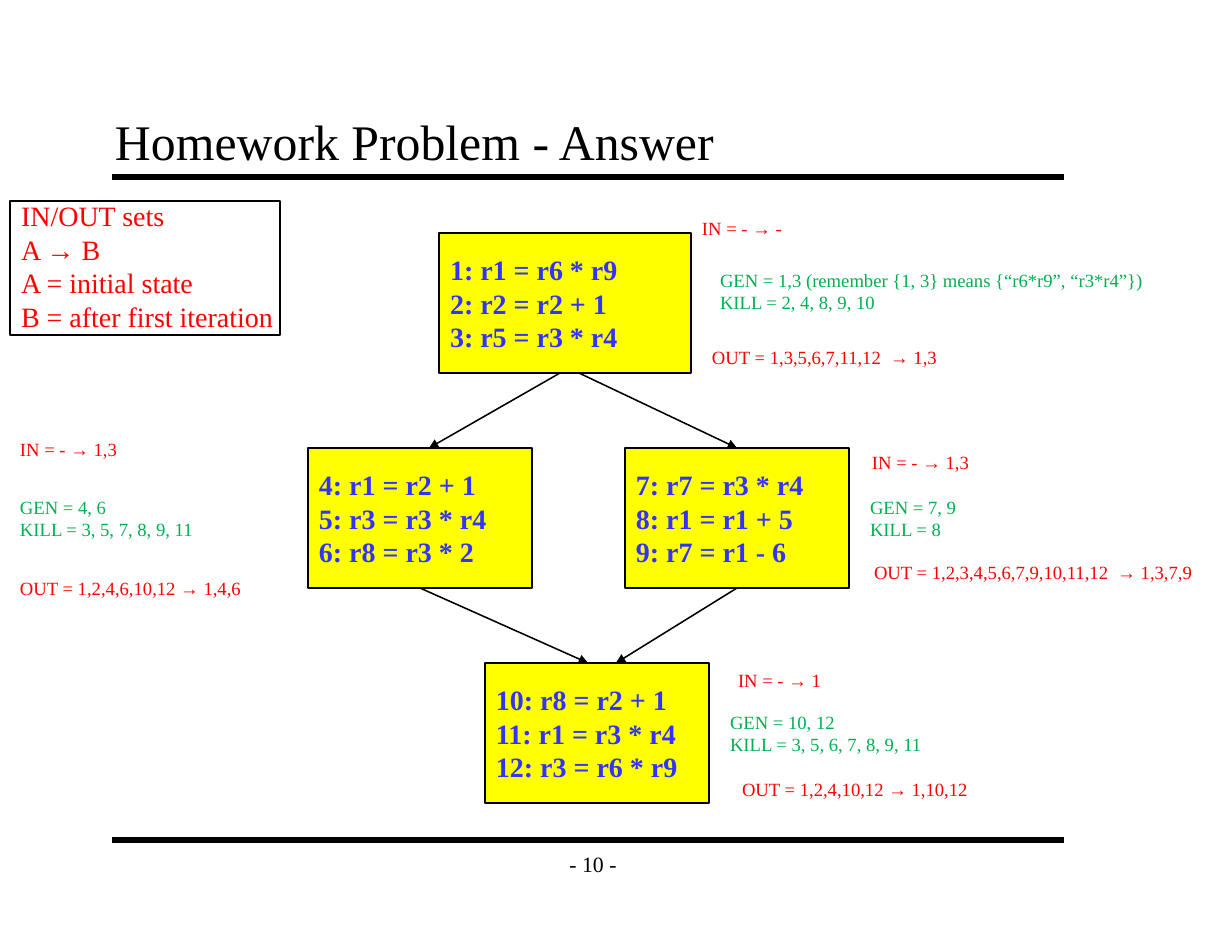
from dataclasses import dataclass

from lxml.etree import SubElement
from pptx import Presentation
from pptx.dml.color import RGBColor
from pptx.enum.shapes import MSO_CONNECTOR, MSO_SHAPE
from pptx.enum.text import MSO_ANCHOR, MSO_AUTO_SIZE, PP_ALIGN
from pptx.oxml.ns import qn
from pptx.util import Emu, Pt

EMU_PER_PX = 914400 / 112
TOP, BOTTOM = 0, 2


def px(length):
    return Emu(round(length * EMU_PER_PX))


@dataclass(frozen=True)
class Theme:
    font: str = "Times New Roman"
    ink: RGBColor = RGBColor(0, 0, 0)
    code: RGBColor = RGBColor(0x33, 0x33, 0xFF)
    block: RGBColor = RGBColor(0xFF, 0xFF, 0)
    in_out: RGBColor = RGBColor(0xFF, 0, 0)
    gen_kill: RGBColor = RGBColor(0, 0xB0, 0x50)
    title_size: int = 32
    code_size: int = 18
    page_size: int = 14
    label_size: int = 12
    rule_width: int = 4
    line_width: int = 1


class FlowSlide:
    def __init__(self, slide, theme):
        self.slide = slide
        self.theme = theme

    def add_lines(self, frame, lines, size, color, bold=False, align=PP_ALIGN.LEFT):
        for index, line in enumerate(lines):
            paragraph = frame.add_paragraph() if index else frame.paragraphs[0]
            paragraph.alignment = align
            run = paragraph.add_run()
            run.text = line
            run.font.name = self.theme.font
            run.font.size = Pt(size)
            run.font.bold = bold
            run.font.color.rgb = color

    def title(self, text, left, top, width, height):
        title = self.slide.shapes.title
        title.left, title.top, title.width, title.height = map(px, (left, top, width, height))
        frame = title.text_frame
        frame.auto_size = MSO_AUTO_SIZE.NONE
        frame.vertical_anchor = MSO_ANCHOR.BOTTOM
        frame.margin_left = frame.margin_right = px(12)
        frame.margin_top = frame.margin_bottom = px(7)
        self.add_lines(frame, [text], self.theme.title_size, self.theme.ink)

    def label(self, lines, left, top, width, height, color, size=None):
        box = self.slide.shapes.add_textbox(*map(px, (left, top, width, height)))
        frame = box.text_frame
        frame.word_wrap = False
        self.add_lines(frame, lines, size or self.theme.label_size, color)

    def page_number(self, text, left, top, width, height):
        box = self.slide.shapes.add_textbox(*map(px, (left, top, width, height)))
        frame = box.text_frame
        frame.word_wrap = False
        frame.vertical_anchor = MSO_ANCHOR.MIDDLE
        self.add_lines(frame, [text], self.theme.page_size, self.theme.ink, align=PP_ALIGN.CENTER)

    def rectangle(self, left, top, width, height):
        """Add an unfilled, outlined rectangle."""
        rectangle = self.slide.shapes.add_shape(
            MSO_SHAPE.RECTANGLE, *map(px, (left, top, width, height)))
        rectangle.shadow.inherit = False
        rectangle.fill.background()
        rectangle.line.color.rgb = self.theme.ink
        rectangle.line.width = Pt(self.theme.line_width)
        return rectangle

    def basic_block(self, instructions, left, top, width=224, height=140):
        block = self.rectangle(left, top, width, height)
        block.fill.solid()
        block.fill.fore_color.rgb = self.theme.block
        frame = block.text_frame
        frame.word_wrap = True
        frame.vertical_anchor = MSO_ANCHOR.MIDDLE
        self.add_lines(frame, instructions, self.theme.code_size, self.theme.code, bold=True)
        return block

    def line(self, start, end, width):
        line = self.slide.shapes.add_connector(
            MSO_CONNECTOR.STRAIGHT, *map(px, (*start, *end)))
        line.line.color.rgb = self.theme.ink
        line.line.width = Pt(width)
        SubElement(line._element.spPr, qn("a:effectLst"))
        return line

    def arrow(self, start, end, source=None, target=None):
        """Add an arrow, joined to source's bottom or target's top if given."""
        arrow = self.line(start, end, self.theme.line_width)
        outline = arrow._element.spPr.find(qn("a:ln"))
        SubElement(outline, qn("a:tailEnd"), type="triangle")
        if source:
            arrow.begin_connect(source, BOTTOM)
        if target:
            arrow.end_connect(target, TOP)


def main():
    deck = Presentation()
    deck.slide_width, deck.slide_height = px(1232), px(952)
    theme = Theme()
    flow = FlowSlide(deck.slides.add_slide(deck.slide_layouts[5]), theme)

    for rule_y in (177, 840):
        flow.line((112, rule_y), (1064, rule_y), theme.rule_width)
    flow.page_number("- 10 -", 551, 840, 84, 47)
    flow.title("Homework Problem - Answer", 103, 103, 952, 75)

    flow.basic_block(["1: r1 = r6 * r9", "2: r2 = r2 + 1", "3: r5 = r3 * r4"], 439, 233, width=252)
    left_branch = flow.basic_block(
        ["4: r1 = r2 + 1", "5: r3 = r3 * r4", "6: r8 = r3 * 2"], 308, 448)
    right_branch = flow.basic_block(
        ["7: r7 = r3 * r4", "8: r1 = r1 + 5", "9: r7 = r1 - 6"], 625, 448)
    flow.basic_block(["10: r8 = r2 + 1", "11: r1 = r3 * r4", "12: r3 = r6 * r9"], 485, 663)

    flow.arrow((560, 373), (429, 448))
    flow.arrow((579, 373), (737, 448), target=right_branch)
    flow.arrow((737, 588), (616, 663), source=right_branch)
    flow.arrow((420, 588), (588, 663), source=left_branch)

    gen_kill_sets = [
        ("GEN = 1,3 (remember {1, 3} means {“r6*r9”, “r3*r4”})", "KILL = 2, 4, 8, 9, 10",
         709, 263, 455),
        ("GEN = 7, 9", "KILL = 8", 859, 490, 113),
        ("GEN = 10, 12", "KILL = 3, 5, 6, 7, 8, 9, 11", 719, 705, 216),
        ("GEN = 4, 6", "KILL = 3, 5, 7, 8, 9, 11", 9, 490, 197),
    ]
    for gen, kill, left, top, width in gen_kill_sets:
        flow.label([gen, kill], left, top, width, 57, theme.gen_kill)

    in_out_sets = [
        ("IN = - → -", 691, 211, 103),
        ("OUT = 1,3,5,6,7,11,12  → 1,3", 701, 340, 250),
        ("IN = - → 1,3", 861, 445, 124),
        ("OUT = 1,2,3,4,5,6,7,9,10,11,12  → 1,3,7,9", 863, 555, 344),
        ("IN = - → 1", 727, 663, 111),
        ("OUT = 1,2,4,10,12 → 1,10,12", 731, 772, 255),
        ("IN = - → 1,3", 9, 432, 124),
        ("OUT = 1,2,4,6,10,12 → 1,4,6", 9, 571, 250),
    ]
    for state, left, top, width in in_out_sets:
        flow.label([state], left, top, width, 34, theme.in_out)

    legend = ["IN/OUT sets", "A → B", "A = initial state", "B = after first iteration"]
    flow.label(legend, 10, 193, 278, 147, theme.in_out, theme.code_size)
    flow.rectangle(10, 201, 270, 134)

    deck.save("out.pptx")


if __name__ == "__main__":
    main()
